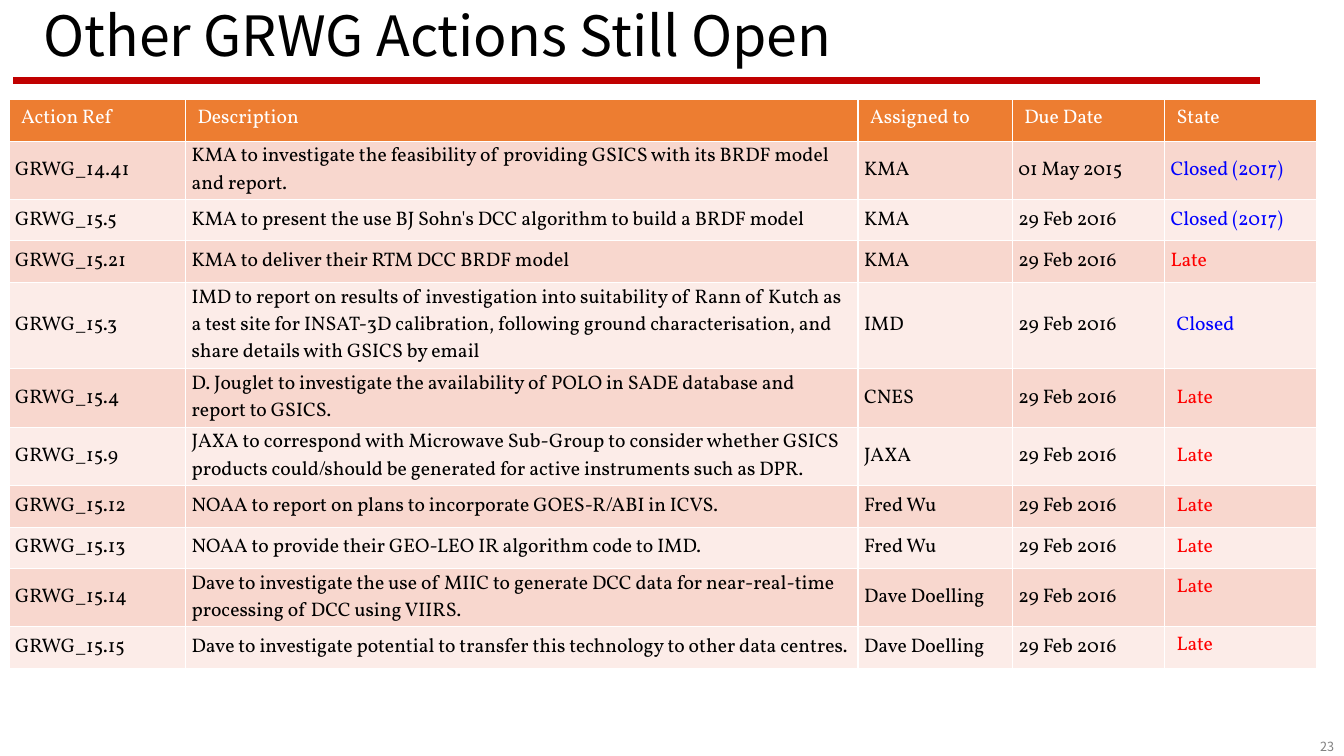
"""Builds the slide that lists the GRWG actions still open."""
from lxml import etree
from pptx import Presentation
from pptx import util as u
from pptx.dml import color
from pptx.enum import shapes, text
from pptx.oxml import ns

ACTIONS = [
    ("GRWG_14.41", "KMA to investigate the feasibility of providing GSICS with its BRDF model and report.",
     "KMA", "01 May 2015", "Closed (2017)"),
    ("GRWG_15.5", "KMA to present the use BJ Sohn's DCC algorithm to build a BRDF model",
     "KMA", "29 Feb 2016", "Closed (2017)"),
    ("GRWG_15.21", "KMA to deliver their RTM DCC BRDF model",
     "KMA", "29 Feb 2016", "Late"),
    ("GRWG_15.3", "IMD to report on results of investigation into suitability of Rann of Kutch as a test site "
     "for INSAT-3D calibration, following ground characterisation, and share details with GSICS by email",
     "IMD", "29 Feb 2016", "Closed"),
    ("GRWG_15.4", "D. Jouglet to investigate the availability of POLO in SADE database and report to GSICS.",
     "CNES", "29 Feb 2016", "Late"),
    ("GRWG_15.9", "JAXA to correspond with Microwave Sub-Group to consider whether GSICS products "
     "could/should be generated for active instruments such as DPR.",
     "JAXA", "29 Feb 2016", "Late"),
    ("GRWG_15.12", "NOAA to report on plans to incorporate GOES-R/ABI in ICVS.",
     "Fred Wu", "29 Feb 2016", "Late"),
    ("GRWG_15.13", "NOAA to provide their GEO-LEO IR algorithm code to IMD.",
     "Fred Wu", "29 Feb 2016", "Late"),
    ("GRWG_15.14", "Dave to investigate the use of MIIC to generate DCC data for near-real-time "
     "processing of DCC using VIIRS.",
     "Dave Doelling", "29 Feb 2016", "Late"),
    ("GRWG_15.15", "Dave to investigate potential to transfer this technology to other data centres.",
     "Dave Doelling", "29 Feb 2016", "Late"),
]
HEADINGS = ("Action Ref", "Description", "Assigned to", "Due Date", "State")
COLUMN_WIDTHS = (1.75, 6.67, 1.53, 1.51, 1.51)
DESCRIPTION_LINES = (2, 1, 1, 3, 2, 2, 1, 1, 2, 1)
HEIGHT_FOR_LINES = {1: 0.41, 2: 0.58, 3: 0.86}
ROW_HEIGHTS = [HEIGHT_FOR_LINES[lines] for lines in (1, *DESCRIPTION_LINES)]
STATE = len(HEADINGS) - 1
FIRST_WIDE_STATE = 4
FIRST_TOP_STATE = 9


def rgb(code):
    return color.RGBColor.from_string(code)


class ActionSlide:
    heading_font = "Noto Sans CJK KR"
    table_font = "Vollkorn"
    black, white, grey = "000000", "FFFFFF", "808080"
    rule_red, header_orange = "C00000", "ED7D31"
    bands = ("FCECE8", "F8D7CE")
    late_red, closed_blue = "FF0000", "0000FF"

    def __init__(self, deck):
        self.slide = deck.slides.add_slide(deck.slide_layouts[5])

    def style(self, paragraph, font, size, code):
        paragraph.font.name = font
        paragraph.font.size = u.Pt(size)
        paragraph.font.bold = False
        paragraph.font.color.rgb = rgb(code)

    def title(self, wording, left, top, width, height):
        title = self.slide.shapes.title
        title.left, title.top = u.Inches(left), u.Inches(top)
        title.width, title.height = u.Inches(width), u.Inches(height)
        frame = title.text_frame
        frame.text = wording
        frame.auto_size = text.MSO_AUTO_SIZE.NONE
        frame.vertical_anchor = text.MSO_ANCHOR.MIDDLE
        paragraph = frame.paragraphs[0]
        paragraph.alignment = text.PP_ALIGN.LEFT
        paragraph.line_spacing = 0.9
        self.style(paragraph, self.heading_font, 39.6, self.black)

    def rule(self, left, right, y):
        rule = self.slide.shapes.add_connector(
            shapes.MSO_CONNECTOR.STRAIGHT,
            u.Inches(left), u.Inches(y), u.Inches(right), u.Inches(y))
        rule.line.color.rgb = rgb(self.rule_red)
        rule.line.width = u.Pt(4.5)
        etree.SubElement(rule._element.spPr, ns.qn("a:effectLst"))

    def page_number(self, number, left, top, width, height):
        box = self.slide.shapes.add_textbox(
            u.Inches(left), u.Inches(top), u.Inches(width), u.Inches(height))
        box.text_frame.word_wrap = True
        box.text_frame.text = number
        paragraph = box.text_frame.paragraphs[0]
        paragraph.alignment = text.PP_ALIGN.RIGHT
        self.style(paragraph, self.heading_font, 9, self.grey)

    def cell(self, cell, wording, fill, ink, wide, top):
        cell.text = wording
        cell.fill.solid()
        cell.fill.fore_color.rgb = rgb(fill)
        cell.margin_left = cell.margin_right = u.Inches(0.12 if wide else 0.06)
        cell.margin_top = cell.margin_bottom = u.Inches(0.05 if wide else 0.02)
        cell.vertical_anchor = text.MSO_ANCHOR.TOP if top else text.MSO_ANCHOR.MIDDLE
        self.style(cell.text_frame.paragraphs[0], self.table_font, 14, ink)

    def action_table(self, left, top):
        table = self.slide.shapes.add_table(
            len(ROW_HEIGHTS), len(HEADINGS), u.Inches(left), u.Inches(top),
            u.Inches(sum(COLUMN_WIDTHS)), u.Inches(sum(ROW_HEIGHTS))).table
        for column, width in zip(table.columns, COLUMN_WIDTHS):
            column.width = u.Inches(width)
        for row, height in zip(table.rows, ROW_HEIGHTS):
            row.height = u.Inches(height)
        for c, heading in enumerate(HEADINGS):
            self.cell(table.cell(0, c), heading, self.header_orange, self.white, True, True)
        for r, action in enumerate(ACTIONS, 1):
            for c, wording in enumerate(action):
                is_state = c == STATE
                ink = self.black
                if is_state:
                    ink = self.late_red if wording == "Late" else self.closed_blue
                self.cell(table.cell(r, c), wording, self.bands[r % 2], ink,
                          is_state and r >= FIRST_WIDE_STATE,
                          is_state and r >= FIRST_TOP_STATE)


def main():
    deck = Presentation()
    deck.slide_width, deck.slide_height = u.Inches(13.33), u.Inches(7.5)
    page = ActionSlide(deck)
    page.rule(0.13, 12.5, 0.8)
    page.page_number("23", 12.19, 7.28, 1.14, 0.25)
    page.title("Other GRWG Actions Still Open", 0.33, 0.08, 11.5, 0.6)
    page.action_table(0.09, 0.99)
    deck.save("out.pptx")


if __name__ == "__main__":
    main()
